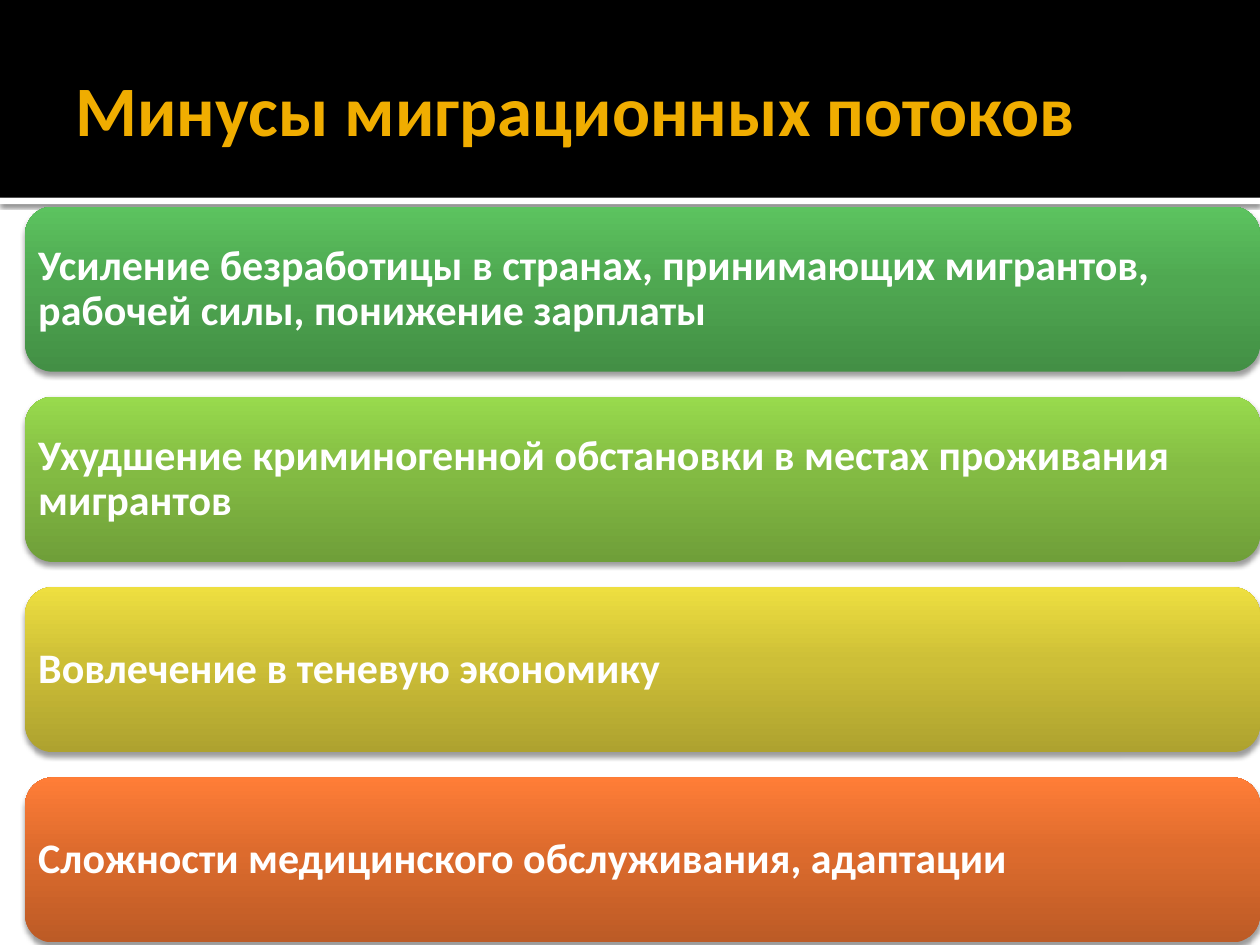
import copy

import lxml.etree
import pptx
import pptx.dml.color
import pptx.enum.shapes
import pptx.enum.text
import pptx.oxml
import pptx.oxml.ns
import pptx.util

Inches = pptx.util.Inches
Pt = pptx.util.Pt
Shapes = pptx.enum.shapes.MSO_SHAPE
COLORS = {"black": "000000", "white": "FFFFFF", "title": "F0AD00"}
FONT = "Calibri"

# Each card: text and its gradient from the bottom edge to the top
CARDS = [
    ("Усиление безработицы в странах, принимающих мигрантов, рабочей силы, понижение зарплаты",
     ("438F45", "4FA851", "5CC35F")),
    ("Ухудшение криминогенной обстановки в местах проживания мигрантов",
     ("6F9F39", "83BB43", "98DA4D")),
    ("Вовлечение в теневую экономику", ("AEA22F", "CDBF37", "EEDF40")),
    ("Сложности медицинского обслуживания, адаптации", ("BC5B26", "DD6B2D", "FF7D37")),
]
STOP_POSITIONS = (0, 0.55, 1)
CARD_TOP, CARD_HEIGHT, CARD_STEP = 1.64, 1.31, 1.51


def add_shadow(shape, opacity, blur, distance):
    """Give the shape a black shadow that falls straight down."""
    shape.shadow.inherit = False
    effects = shape._element.spPr.find(pptx.oxml.ns.qn("a:effectLst"))
    effects.append(pptx.oxml.parse_xml(
        f'<a:outerShdw {pptx.oxml.ns.nsdecls("a")} blurRad="{Pt(blur)}" dist="{Pt(distance)}" '
        f'dir="5400000" algn="ctr" rotWithShape="0"><a:srgbClr val="{COLORS["black"]}">'
        f'<a:alpha val="{opacity * 1000}"/></a:srgbClr></a:outerShdw>'))


def write_text(shape, text, size, color, insets):
    """Write one bold, left-aligned paragraph and return it."""
    frame = shape.text_frame
    frame.word_wrap = True
    frame.vertical_anchor = pptx.enum.text.MSO_ANCHOR.MIDDLE
    (frame.margin_left, frame.margin_top,
     frame.margin_right, frame.margin_bottom) = map(Inches, insets)
    paragraph = frame.paragraphs[0]
    paragraph.alignment = pptx.enum.text.PP_ALIGN.LEFT
    run = paragraph.add_run()
    run.text = text
    run.font.name = FONT
    run.font.size = Pt(size)
    run.font.bold = True
    run.font.color.rgb = pptx.dml.color.RGBColor.from_string(COLORS[color])
    return paragraph


presentation = pptx.Presentation()
presentation.slide_width = Inches(10)
presentation.slide_height = Inches(7.5)
slide = presentation.slides.add_slide(presentation.slide_layouts[6])

# Header band and the white strip under it
for top, height, color in ((1.57, 0.05, "white"), (0, 1.57, "black")):
    band = slide.shapes.add_shape(
        Shapes.RECTANGLE, Inches(0), Inches(top), Inches(10), Inches(height))
    band.fill.solid()
    band.fill.fore_color.rgb = pptx.dml.color.RGBColor.from_string(COLORS[color])
    band.line.fill.background()
    if color == "white":
        add_shadow(band, 60, 2.5, 0.8)
    else:
        band.shadow.inherit = False

# Title
title = slide.shapes.add_textbox(Inches(0.5), Inches(0.17), Inches(9), Inches(1.37))
write_text(title, "Минусы миграционных потоков", 40.5, "title", (0.1, 0.05, 0.05, 0.05))

# Cards
for index, (text, gradient) in enumerate(CARDS):
    card = slide.shapes.add_shape(
        Shapes.ROUNDED_RECTANGLE, Inches(0.2), Inches(CARD_TOP + index * CARD_STEP),
        Inches(9.8), Inches(CARD_HEIGHT))
    card.fill.gradient()
    card.fill.gradient_angle = 90
    stop_list = next(card._element.spPr.iter(pptx.oxml.ns.qn("a:gsLst")))
    stop_list.append(copy.deepcopy(stop_list[0]))
    for stop, position, color in zip(card.fill.gradient_stops, STOP_POSITIONS, gradient):
        stop.position = position
        stop.color.rgb = pptx.dml.color.RGBColor.from_string(color)
    card.line.fill.background()
    add_shadow(card, 38, 3.1, 2)
    # The rounded corners already inset the text a little
    paragraph = write_text(card, text, 24, "white", (0.04, 0.04, 0.04, 0.04))
    paragraph.line_spacing = 0.9

presentation.save("out.pptx")
